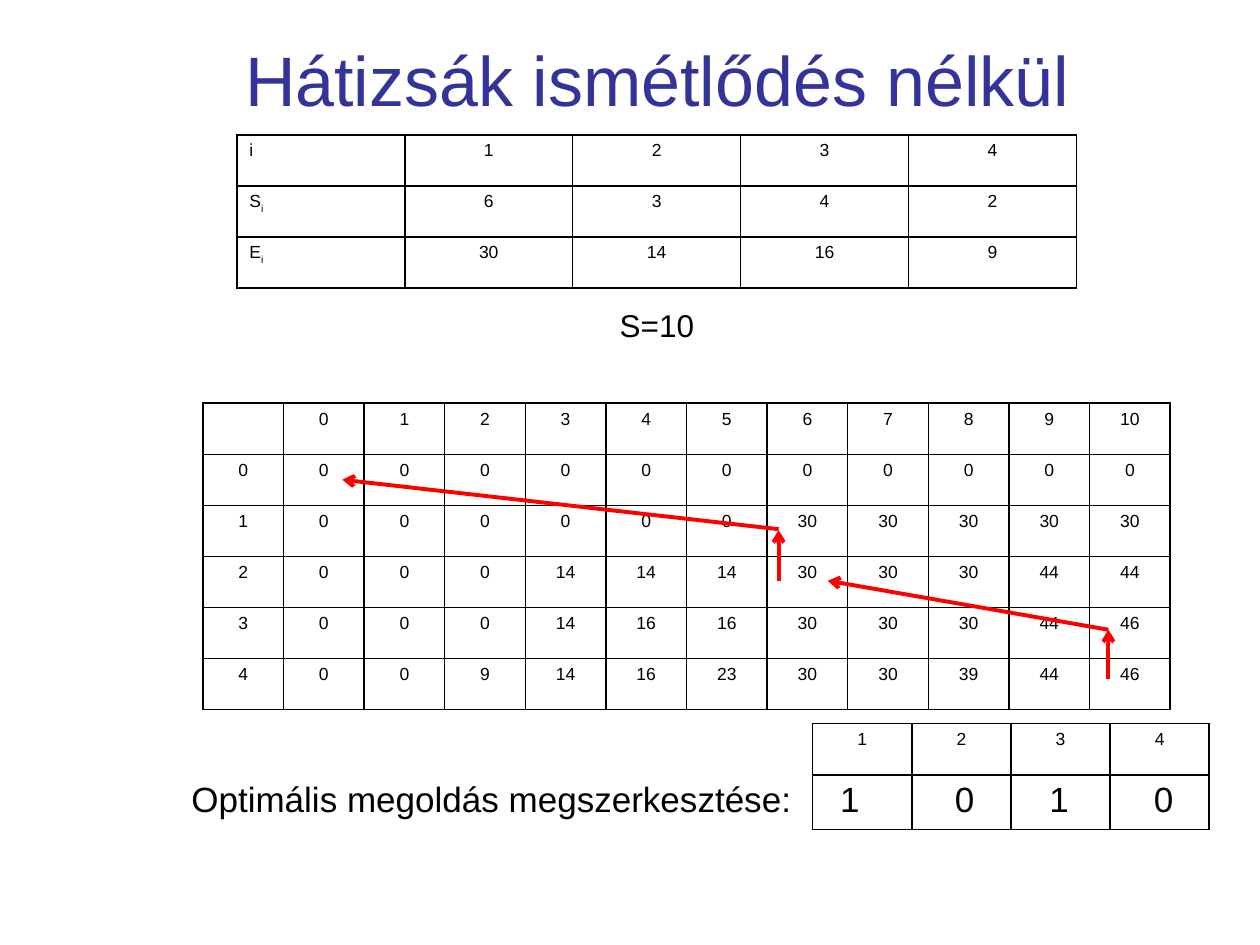
from lxml.etree import SubElement
from pptx import Presentation
from pptx.dml.color import RGBColor
from pptx.enum.shapes import MSO_CONNECTOR
from pptx.enum.text import MSO_ANCHOR, MSO_AUTO_SIZE, PP_ALIGN
from pptx.oxml import parse_xml
from pptx.oxml.ns import nsdecls, qn
from pptx.util import Inches, Pt

BLACK, BLUE, RED = "000000", "333399", "FF0000"
LEFT, MID = PP_ALIGN.LEFT, PP_ALIGN.CENTER

ITEMS = [
    ["i", 1, 2, 3, 4],
    ["S_i", 6, 3, 4, 2],
    ["E_i", 30, 14, 16, 9],
]
STEPS = [
    ["", *range(11)],
    [0] * 12,
    [1] + [0] * 6 + [30] * 5,
    [2, 0, 0, 0, 14, 14, 14, 30, 30, 30, 44, 44],
    [3, 0, 0, 0, 14, 16, 16, 30, 30, 30, 44, 46],
    [4, 0, 0, 9, 14, 16, 23, 30, 30, 39, 44, 46],
]
PICKS = [[1, 2, 3, 4], [""] * 4]

# left, top, column width, row heights
GRIDS = [
    (ITEMS, 1.88, 1.07, 1.333, [0.405] * 3),
    (STEPS, 1.61, 3.2, 0.64, [0.405] * 6),
    (PICKS, 6.45, 5.74, 0.787, [0.41, 0.435]),
]

# text, left, top, width, height, size, colour, align, wrap
TEXTS = [
    ("Hátizsák ismétlődés nélkül", 0.67, 0, 9.09, 1.25, 40, BLUE, MID, True),
    ("S=10", 4.82, 2.38, 0.8, 0.4, 18, BLACK, LEFT, False),
    ("Optimális megoldás megszerkesztése:", 1.42, 6.12, 6.42, 0.44, 20,
     BLACK, LEFT, True),
]
TEXTS += [(mark, x, 6.12, 0.36, 0.44, 20, BLACK, LEFT, False)
          for mark, x in zip("1010", (6.57, 7.48, 8.23, 9.06))]

# column and row in the grid of STEPS, from and to
MOVES = [
    ((11.23, 5.41), (11.23, 4.44)),
    ((11.23, 4.44), (7.75, 3.48)),
    ((7.14, 3.48), (7.14, 2.49)),
    ((7.14, 2.47), (1.73, 1.5)),
]


def tint(code):
    return RGBColor.from_string(code)


def write(para, text, size, code, align):
    para.alignment = align
    base, _, sub = str(text).partition("_")
    for part, drop in ((base, False), (sub, True)):
        if not part:
            continue
        run = para.add_run()
        run.text = part
        for key, val in {"name": "Arial", "size": Pt(size)}.items():
            setattr(run.font, key, val)
        run.font.color.rgb = tint(code)
        if drop:
            run.font._element.set("baseline", "-25000")


def edge(cell):
    props = cell._tc.get_or_add_tcPr()
    for spot, side in enumerate(("lnL", "lnR", "lnT", "lnB")):
        props.insert(spot, parse_xml(
            f'<a:{side} {nsdecls("a")} w="{Pt(1)}"><a:solidFill>'
            f'<a:srgbClr val="{BLACK}"/></a:solidFill></a:{side}>'))


def grid(slide, data, x, y, wide, highs):
    count = len(data[0])
    table = slide.shapes.add_table(
        len(data), count, Inches(x), Inches(y),
        Inches(wide * count), Inches(sum(highs))).table
    for flag in ("first_row", "horz_banding"):
        setattr(table, flag, False)
    for col in table.columns:
        col.width = Inches(wide)
    for row, high, vals in zip(table.rows, highs, data):
        row.height = Inches(high)
        for cell, val in zip(row.cells, vals):
            cell.fill.background()
            edge(cell)
            align = LEFT if str(val)[:1].isalpha() else MID
            write(cell.text_frame.paragraphs[0], val, 10, BLACK, align)


def label(slide, text, x, y, wide, high, size, code, align, wrap):
    box = slide.shapes.add_textbox(*map(Inches, (x, y, wide, high)))
    look = {
        "word_wrap": wrap,
        "auto_size": MSO_AUTO_SIZE.NONE,
        "vertical_anchor": MSO_ANCHOR.MIDDLE if align == MID else MSO_ANCHOR.TOP,
    }
    for key, val in look.items():
        setattr(box.text_frame, key, val)
    write(box.text_frame.paragraphs[0], text, size, code, align)


def arrow(slide, start, end):
    _, x, y, wide, highs = GRIDS[1]
    ends = [Inches(v) for col, row in (start, end)
            for v in (x + col * wide, y + row * highs[0])]
    line = slide.shapes.add_connector(MSO_CONNECTOR.STRAIGHT, *ends)
    line.line.color.rgb = tint(RED)
    line.line.width = Pt(2.25)
    SubElement(line.line._get_or_add_ln(), qn("a:tailEnd"), type="arrow")
    SubElement(line._element.spPr, qn("a:effectLst"))


def main():
    deck = Presentation()
    deck.slide_width, deck.slide_height = Inches(10), Inches(7.5)
    slide = deck.slides.add_slide(deck.slide_layouts[6])
    for spec in GRIDS:
        grid(slide, *spec)
    for spec in TEXTS:
        label(slide, *spec)
    for move in MOVES:
        arrow(slide, *move)
    deck.save("out.pptx")


if __name__ == "__main__":
    main()
